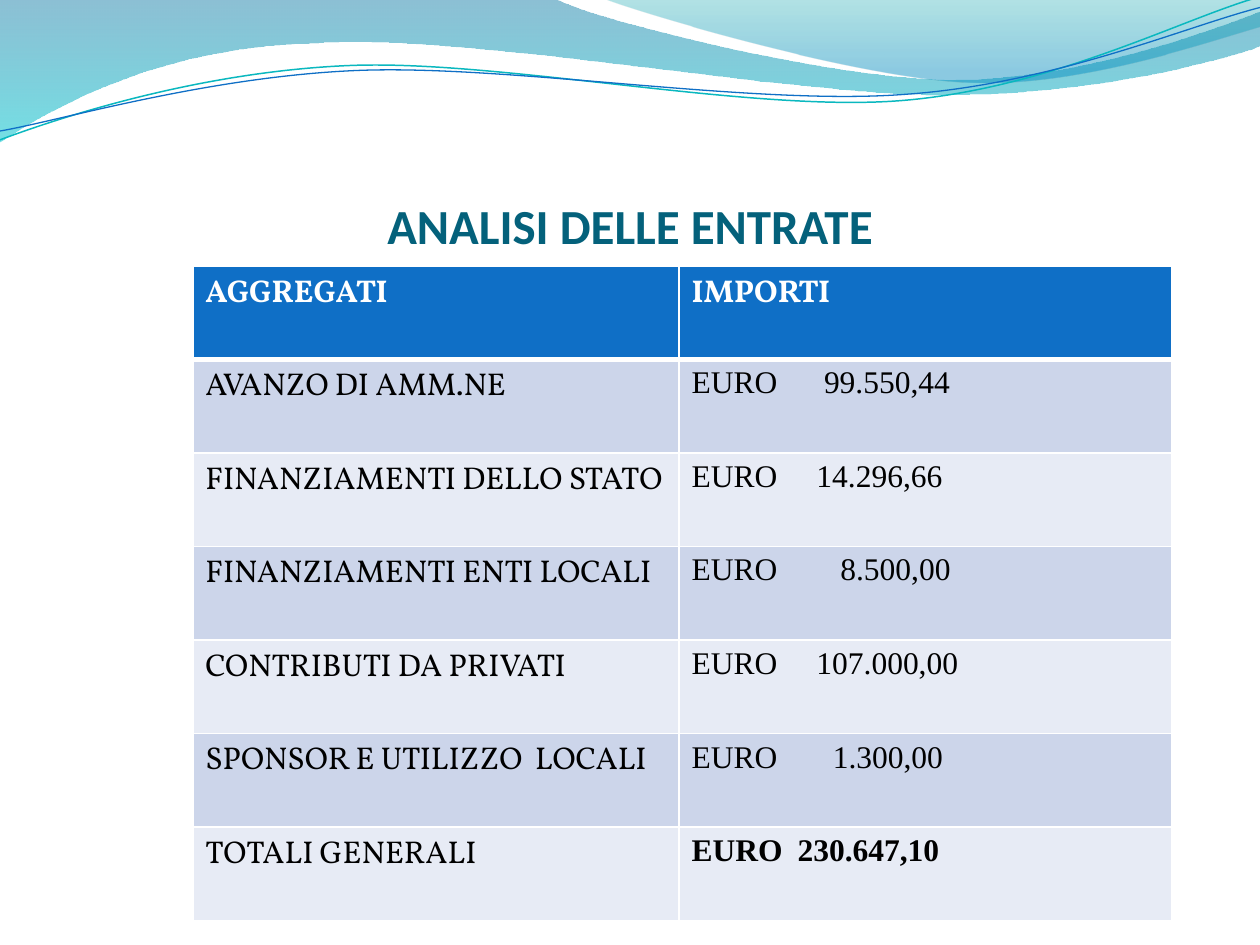
"""Build the slide on the analysis of revenue."""
import math

import lxml.etree
import pptx
import pptx.dml.color
import pptx.enum.text
import pptx.oxml.ns
import pptx.util

THEME = {
    "title": "04617B", "header": "0F6FC6", "bands": ("CCD5EA", "E7EBF5"),
    "white": "FFFFFF", "black": "000000", "teal": "0AB8BF",
    "wave": ((0, "0074A1", 45), (1, "00C6CF", 55)),
    "veil": ((0, "00A1A9", 30), (0.8, "008BBF", 45)),
    "title_font": "Calibri", "label_font": "Vollkorn", "amount_font": "Times New Roman",
    "title_size": 28, "table_size": 18,
}
rgb = pptx.dml.color.RGBColor.from_string
qn = pptx.oxml.ns.qn

deck = pptx.Presentation()
deck.slide_width, deck.slide_height = pptx.util.Inches(10), pptx.util.Inches(7.5)
slide = deck.slides.add_slide(deck.slide_layouts[6])
unit = deck.slide_width // 10


def add_outline(shapes, start, segments, closed, tilt=0, center=(0, 0)):
    """Draw straight and cubic segments in grid units, tilted about a center."""
    cos, sin = math.cos(math.radians(tilt)), math.sin(math.radians(tilt))
    (cx, cy), points = center, [start]
    for segment in segments:
        points.extend(zip(segment[::2], segment[1::2]))
    emu = [(round((cx + (x - cx) * cos + (y - cy) * sin) * unit),
            round((cy - (x - cx) * sin + (y - cy) * cos) * unit)) for x, y in points]
    builder = shapes.build_freeform(*emu[0], scale=1.0)
    builder.add_line_segments(emu[1:], close=closed)
    outline = builder.convert_to_shape()
    outline.shadow.inherit = False
    outline.rotation = tilt
    steps = iter(list(outline._element.iter(qn("a:lnTo"))))
    for segment in segments:
        group = [next(steps) for _ in segment[::2]]
        if len(group) == 3:
            curve = lxml.etree.Element(qn("a:cubicBezTo"))
            group[0].addprevious(curve)
            for step in group:
                curve.append(step[0])
                step.getparent().remove(step)
    return outline


def style_text(paragraph, font, size, color, bold):
    """Set the type of a whole paragraph."""
    paragraph.font.name = font
    paragraph.font.size = pptx.util.Pt(size)
    paragraph.font.color.rgb = rgb(color)
    paragraph.font.bold = bold


bands = [
    ((0, 0), [(4.4, -0.01), (4.76, 0.17, 6.64, 0.63, 7.58, 0.63),
              (8.53, 0.63, 9.58, 0.26, 10, 0.09), (10.01, 0.36),
              (9.83, 0.44, 8.7, 0.76, 7.46, 0.75), (6.22, 0.75, 3.82, 0.28, 2.57, 0.34),
              (1.29, 0.36, 0.46, 0.83, -0.01, 1.13), (0, 0)], THEME["wave"]),
    ((4.79, -0.01), [(5.09, 0.11, 6.82, 0.62, 7.69, 0.65),
                     (8.56, 0.69, 9.61, 0.32, 10, 0.21), (10, 0), (4.79, -0.01)], THEME["veil"]),
]
for start, segments, stops in bands:
    band = add_outline(slide.shapes, start, segments, True)
    band.line.fill.background()
    band.fill.gradient()
    band.fill.gradient_angle = 270
    for stop, (position, color, opacity) in zip(band.fill.gradient_stops, stops):
        stop.position = position
        stop.color.rgb = rgb(color)
    for tint, (position, color, opacity) in zip(band._element.spPr.iter(qn("a:srgbClr")), stops):
        lxml.etree.SubElement(tint, qn("a:alpha"), val=str(opacity * 1000))

strands = [
    ((0, 1.11), [(0.48, 0.93, 1.58, 0.57, 2.77, 0.52), (3.95, 0.47, 5.93, 0.89, 7.13, 0.8),
                 (8.33, 0.71, 9.38, 0.15, 9.98, -0.02)], (4.99, 0.58), THEME["teal"], 0.85),
    ((0, 1.04), [(0.47, 0.96, 1.64, 0.61, 2.83, 0.56), (4.03, 0.51, 5.97, 0.84, 7.17, 0.75),
                 (8.36, 0.67, 9.41, 0.21, 10, 0.06)], (5, 0.59), THEME["header"], 0.75),
]
ribbon = slide.shapes.add_group_shape()
for start, segments, center, color, width in strands:
    strand = add_outline(ribbon.shapes, start, segments, False, -2.7, center)
    strand.fill.background()
    strand.line.color.rgb = rgb(color)
    strand.line.width = pptx.util.Pt(width)

title = slide.shapes.add_textbox(
    *(round(share * unit) for share in (0.5, 0.77, 9, 1.25))).text_frame
title.word_wrap = True
title.vertical_anchor = pptx.enum.text.MSO_ANCHOR.BOTTOM
title.margin_left = title.margin_right = title.margin_bottom = 0
heading = title.paragraphs[0]
heading.text = "ANALISI DELLE ENTRATE"
heading.alignment = pptx.enum.text.PP_ALIGN.CENTER
style_text(heading, THEME["title_font"], THEME["title_size"], THEME["title"], True)

revenue = [
    ("AGGREGATI", "IMPORTI", None),
    ("AVANZO DI AMM.NE", "EURO\t99.550,44", 1.05),
    ("FINANZIAMENTI DELLO STATO", "EURO\t14.296,66", 0.99),
    ("FINANZIAMENTI ENTI LOCALI", "EURO\t8.500,00", 1.18),
    ("CONTRIBUTI DA PRIVATI", "EURO\t107.000,00", 0.99),
    ("SPONSOR E UTILIZZO  LOCALI", "EURO\t1.300,00", 1.12),
    ("TOTALI GENERALI", "EURO\t230.647,10", 0.84),
]
row_height = round(5.2 * unit / len(revenue))
table = slide.shapes.add_table(
    len(revenue), 2, round(1.53 * unit), round(2.11 * unit),
    round(7.77 * unit), row_height * len(revenue)).table
for column, width in zip(table.columns, (3.86, 3.91)):
    column.width = round(width * unit)

for row, (label, amount, tab) in enumerate(revenue):
    table.rows[row].height = row_height
    is_header, is_total = row == 0, row == len(revenue) - 1
    for col, text in enumerate((label, amount)):
        cell = table.cell(row, col)
        cell.fill.solid()
        cell.fill.fore_color.rgb = rgb(THEME["header"] if is_header else THEME["bands"][(row - 1) % 2])
        entry = cell.text_frame.paragraphs[0]
        entry.text = text
        is_amount = col == 1 and not is_header
        style_text(entry, THEME["amount_font" if is_amount else "label_font"], THEME["table_size"],
                   THEME["white" if is_header else "black"], is_header or (is_amount and is_total))
        if is_amount:
            properties = entry._p.get_or_add_pPr()
            tabs = lxml.etree.Element(qn("a:tabLst"))
            lxml.etree.SubElement(tabs, qn("a:tab"), pos=str(round(tab * unit)), algn="l")
            properties.insert(0, tabs)
        for index, side in enumerate("LRTB"):
            heavy = (is_header and side == "B") or (row == 1 and side == "T")
            border = lxml.etree.Element(qn("a:ln" + side), w=str(pptx.util.Pt(3 if heavy else 1)))
            paint = lxml.etree.SubElement(border, qn("a:solidFill"))
            lxml.etree.SubElement(paint, qn("a:srgbClr"), val=THEME["white"])
            cell._tc.get_or_add_tcPr().insert(index, border)

deck.save("out.pptx")
